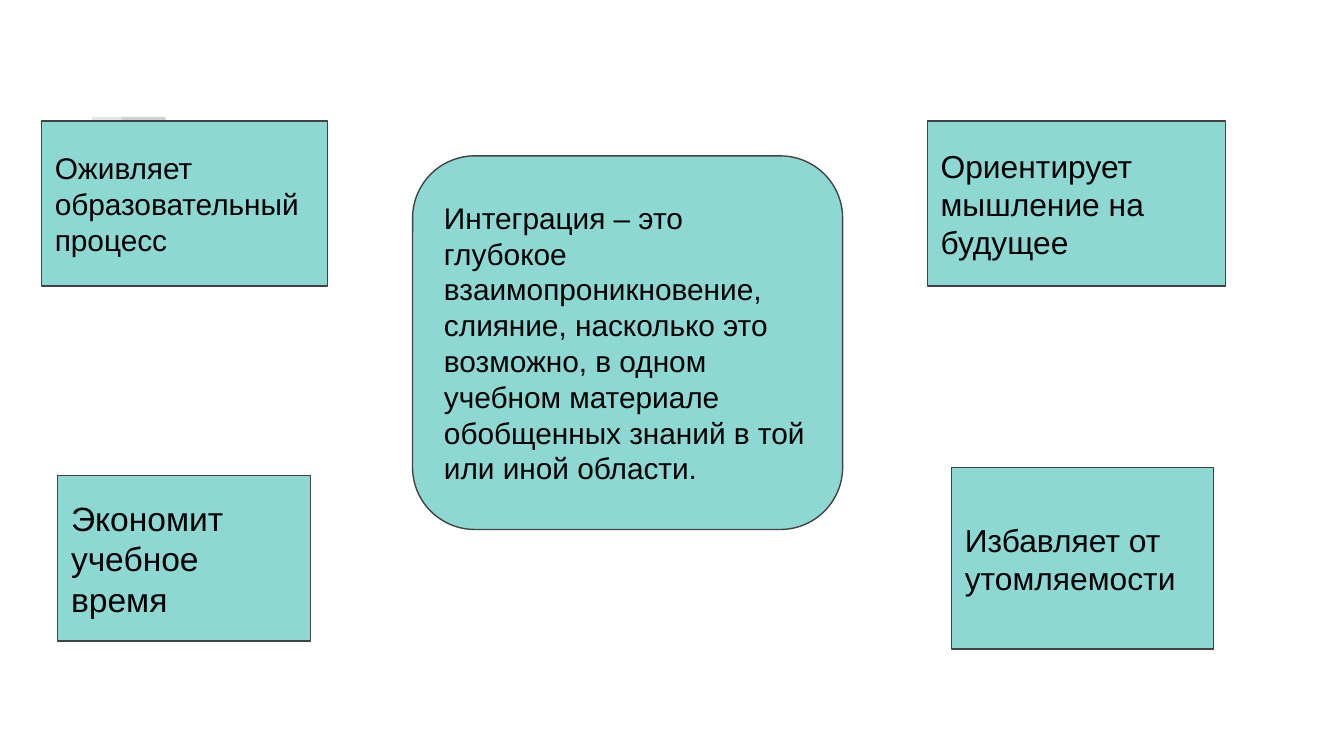
from lxml.etree import SubElement
from pptx import Presentation
from pptx.dml.color import RGBColor
from pptx.enum.shapes import MSO_SHAPE
from pptx.enum.text import MSO_ANCHOR, PP_ALIGN
from pptx.oxml.ns import qn
from pptx.util import Inches, Pt

WIDTH = 10
HEIGHT = WIDTH * 9 / 16

TEAL = RGBColor(0x8D, 0xD8, 0xD3)
GRAY = RGBColor(0x42, 0x42, 0x42)
BLACK = RGBColor(0, 0, 0)
FONT = "Arial"

DEFINITION = ("Интеграция – это глубокое взаимопроникновение, слияние, насколько это "
              "возможно, в одном учебном материале обобщенных знаний в той или иной области.")

# kind, text, size in points, (left, top, width, height) in inches
BOXES = [
    (MSO_SHAPE.ROUNDED_RECTANGLE, DEFINITION, 16, (3.07, 1.16, 3.2, 2.78)),
    (MSO_SHAPE.RECTANGLE, "Ориентирует мышление на будущее", 17, (6.9, 0.9, 2.22, 1.23)),
    (MSO_SHAPE.RECTANGLE, "Оживляет образовательный процесс", 16, (0.31, 0.9, 2.13, 1.23)),
    (MSO_SHAPE.RECTANGLE, "Избавляет от утомляемости", 17, (7.08, 3.48, 1.95, 1.35)),
    (MSO_SHAPE.RECTANGLE, "Экономит учебное время", 18, (0.43, 3.54, 1.88, 1.23)),
]

# Concentric quarter discs behind the top left box
DISC_CENTER = (1.23, 0.87)
DISC_DIAMETERS = (0.65, 1.09)


def add_filled(s, kind, frame, color):
    sp = s.shapes.add_shape(kind, *map(Inches, frame))
    sp.shadow.inherit = False
    sp.fill.solid()
    sp.fill.fore_color.rgb = color
    return sp


def add_quarter_disc(s, diameter):
    left, top = (c - diameter / 2 for c in DISC_CENTER)
    sp = add_filled(s, MSO_SHAPE.PIE, (left, top, diameter, diameter), GRAY)
    sp.line.fill.background()
    sp.rotation = 270
    # Pie angles: 180 and 270 degrees, in 60000ths over 100000
    sp.adjustments[0], sp.adjustments[1] = 108, 162
    color = sp._element.spPr.find(qn("a:solidFill"))[0]
    SubElement(color, qn("a:alpha"), val="13000")


def add_box(s, kind, text, size, frame):
    sp = add_filled(s, kind, frame, TEAL)
    sp.line.color.rgb = GRAY
    sp.line.width = Pt(0.75)
    tf = sp.text_frame
    tf.word_wrap = True
    tf.vertical_anchor = MSO_ANCHOR.MIDDLE
    tf.margin_left = tf.margin_right = tf.margin_top = tf.margin_bottom = Inches(0.1)
    p = tf.paragraphs[0]
    p.alignment = PP_ALIGN.LEFT
    p.line_spacing = 1.0
    r = p.add_run()
    r.text = text
    r.font.name = FONT
    r.font.size = Pt(size)
    r.font.color.rgb = BLACK


def main():
    prs = Presentation()
    prs.slide_width, prs.slide_height = Inches(WIDTH), Inches(HEIGHT)
    s = prs.slides.add_slide(prs.slide_layouts[6])
    for diameter in DISC_DIAMETERS:
        add_quarter_disc(s, diameter)
    for box in BOXES:
        add_box(s, *box)
    prs.save("out.pptx")


if __name__ == "__main__":
    main()
